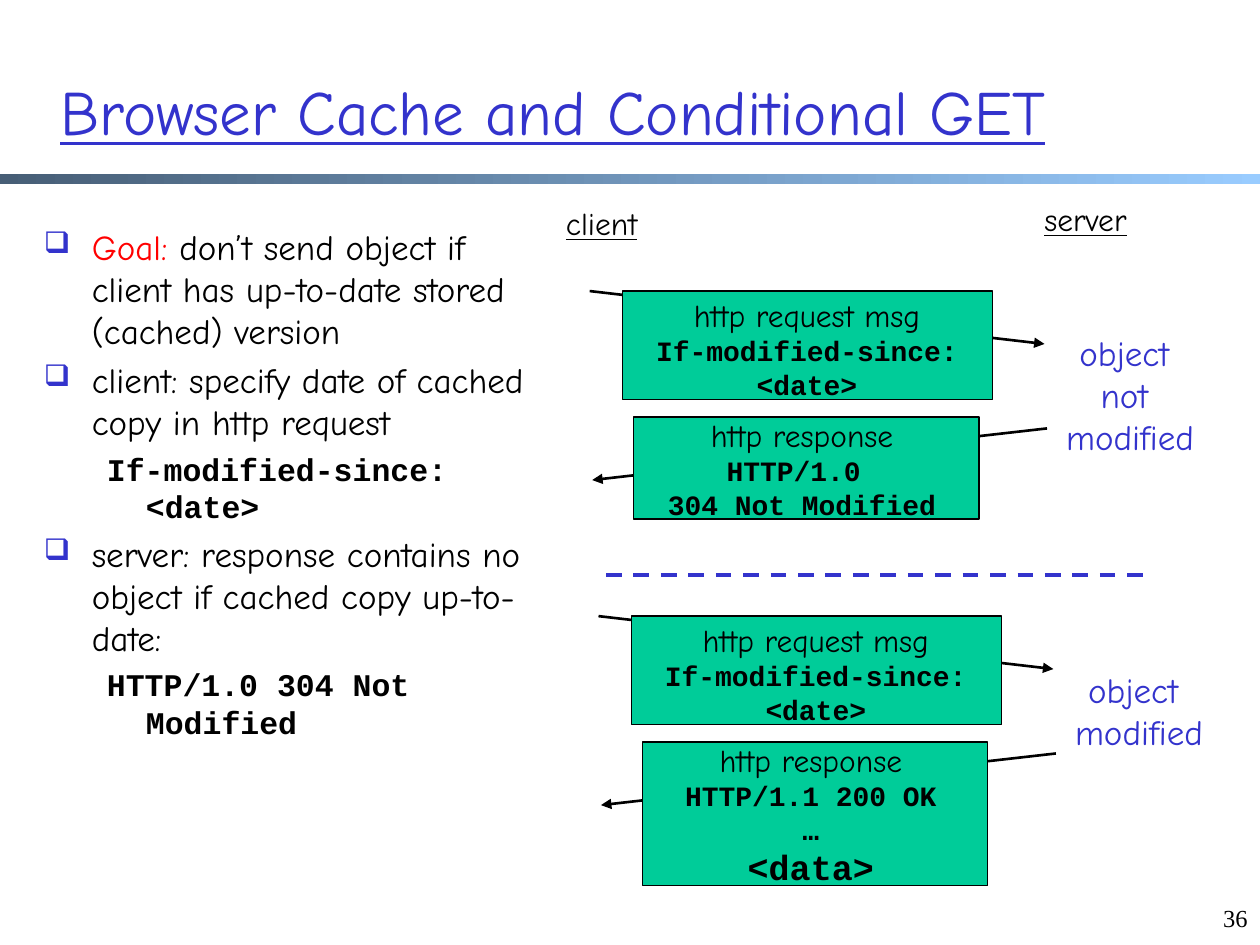
from lxml import etree
from pptx import Presentation
from pptx.dml.color import RGBColor
from pptx.enum.dml import MSO_LINE
from pptx.enum.shapes import MSO_CONNECTOR, MSO_SHAPE
from pptx.enum.text import MSO_ANCHOR, PP_ALIGN
from pptx.oxml.ns import qn
from pptx.util import Emu, Pt

LEFT, CENTER, RIGHT = PP_ALIGN.LEFT, PP_ALIGN.CENTER, PP_ALIGN.RIGHT
TOP, MIDDLE = MSO_ANCHOR.TOP, MSO_ANCHOR.MIDDLE
RECTANGLE, STRAIGHT, DASH = MSO_SHAPE.RECTANGLE, MSO_CONNECTOR.STRAIGHT, MSO_LINE.DASH

BLACK = RGBColor(0x00, 0x00, 0x00)
BLUE = RGBColor(0x33, 0x33, 0xCC)
RED = RGBColor(0xFF, 0x00, 0x00)
GREEN = RGBColor(0x00, 0xCC, 0x99)
SLATE = RGBColor(0x47, 0x5E, 0x76)
SKY = RGBColor(0x99, 0xCC, 0xFF)

HAND, CODE, SERIF = "Comic Neue", "Courier New", "Times New Roman"
EMU_PER_PX = 9144


def px(length):
    """Turn px, a hundred to the inch, into EMU."""
    return Emu(length * EMU_PER_PX)


def hand(text, size=18, color=BLACK, underline=False):
    """Describe a span of handwritten text."""
    return text, HAND, size, color, False, underline


def code(text, size=16):
    """Describe a span of bold code."""
    return text, CODE, size, BLACK, True, False


def add_span(para, text, font, size, color, bold, underline):
    """Add one run with its font settings."""
    span = para.add_run()
    span.text = text
    span.font.name = font
    span.font.size = Pt(size)
    span.font.color.rgb = color
    span.font.bold = bold
    span.font.underline = underline


def add_text(page, left, top, width, height, lines, align=CENTER, anchor=TOP):
    """Add a text box whose lines are lists of spans, and return its paragraphs."""
    frame = page.shapes.add_textbox(px(left), px(top), px(width), px(height)).text_frame
    frame.word_wrap = True
    frame.vertical_anchor = anchor
    for index, spans in enumerate(lines):
        para = frame.add_paragraph() if index else frame.paragraphs[0]
        para.alignment = align
        for span in spans:
            add_span(para, *span)
    return frame.paragraphs


def set_indent(para, margin, indent, bullet):
    """Give a paragraph its hanging indent and, if wanted, a square bullet."""
    para.space_before = Pt(4)
    props = para._p.get_or_add_pPr()
    props.set("marL", str(px(margin)))
    props.set("indent", str(px(indent)))
    if bullet:
        color = etree.SubElement(props, qn("a:buClr"))
        etree.SubElement(color, qn("a:srgbClr"), val=str(BLUE))
        etree.SubElement(props, qn("a:buSzPct"), val="85000")
        etree.SubElement(props, qn("a:buChar"), char="❑")
    else:
        etree.SubElement(props, qn("a:buNone"))


def add_rectangle(page, left, top, width, height):
    """Add a rectangle without shadow."""
    box = page.shapes.add_shape(RECTANGLE, px(left), px(top), px(width), px(height))
    box.shadow.inherit = False
    return box


def add_rule(page):
    """Add the gradient bar below the title."""
    bar = add_rectangle(page, 0, 138, 1000, 8)
    bar.line.fill.background()
    bar.fill.gradient()
    bar.fill.gradient_angle = 0
    for stop, color in zip(bar.fill.gradient_stops, (SLATE, SKY)):
        stop.color.rgb = color


def add_message_box(page, left, top, width, height):
    """Add the green box behind a message."""
    box = add_rectangle(page, left, top, width, height)
    box.fill.solid()
    box.fill.fore_color.rgb = GREEN
    box.line.color.rgb = BLACK
    box.line.width = Pt(0.75)


def add_line(page, start_x, start_y, end_x, end_y, color, width):
    """Add a straight line without shadow."""
    line = page.shapes.add_connector(
        STRAIGHT, px(start_x), px(start_y), px(end_x), px(end_y))
    line.line.color.rgb = color
    line.line.width = Pt(width)
    etree.SubElement(line._element.spPr, qn("a:effectLst"))
    return line


def add_arrow(page, start_x, start_y, end_x, end_y):
    """Add a black line with an arrowhead at its end."""
    arrow = add_line(page, start_x, start_y, end_x, end_y, BLACK, 1.5)
    etree.SubElement(arrow.line._get_or_add_ln(), qn("a:tailEnd"), type="triangle")


def add_exchange(page, x, y, response_height, response):
    """Add a request and its response, from the start of the request arrow."""
    add_arrow(page, x, y, x + 361, y + 42)
    add_message_box(page, x + 26, y, 294, 86)
    add_text(page, x + 26, y - 1, 293, 94,
             [[hand("http request msg")], [code("If-modified-since: <date>")]])
    add_arrow(page, x + 363, y + 109, x + 2, y + 150)
    add_message_box(page, x + 35, y + 100, 274, response_height)
    add_text(page, x + 24, y + 94, 289, response_height + 13,
             [[hand("http response")]] + [[span] for span in response])


def add_goals(page):
    """Add the bulleted list with its code lines."""
    goals = [
        (True, [hand("Goal:", 20, RED),
                hand(" don’t send object if client has up-to-date stored (cached) version", 20)]),
        (True, [hand("client: specify date of cached copy in http request", 20)]),
        (False, [code("If-modified-since: <date>", 18)]),
        (True, [hand("server: response contains no object if cached copy up-to-date:", 20)]),
        (False, [code("HTTP/1.0 304 Not Modified", 18)]),
    ]
    paras = add_text(page, 25, 174, 425, 471, [spans for _, spans in goals], LEFT)
    for para, (bullet, _) in zip(paras, goals):
        margin, indent = (38, -38) if bullet else (81, -31)
        set_indent(para, margin, indent, bullet)


def main():
    """Build the slide and save it."""
    deck = Presentation()
    deck.slide_width, deck.slide_height = px(1000), px(750)
    page = deck.slides.add_slide(deck.slide_layouts[6])

    add_rule(page)
    add_text(page, 950, 712, 50, 50, [[("36", SERIF, 14, BLACK, False, False)]], RIGHT)
    add_text(page, 38, 25, 902, 125,
             [[hand("Browser Cache and Conditional GET", 36, BLUE, True)]], LEFT, MIDDLE)
    add_goals(page)

    add_text(page, 424, 157, 107, 50, [[hand("client", underline=True)]])
    add_text(page, 801, 154, 121, 50, [[hand("server", underline=True)]])
    add_exchange(page, 468, 231, 81, [code("HTTP/1.0 "), code("304 Not Modified")])
    add_line(page, 481, 456, 908, 456, BLUE, 2.25).line.dash_style = DASH
    add_exchange(page, 475, 489, 114,
                 [code("HTTP/1.1 200 OK"), code("…"), code("<data>", 20)])

    for left, top, height, words in (
        (830, 258, 110, ("object ", "not ", "modified")),
        (837, 526, 77, ("object ", "modified")),
    ):
        add_text(page, left, top, 134, height, [[hand(word, 20, BLUE)] for word in words])

    deck.save("out.pptx")


if __name__ == "__main__":
    main()
